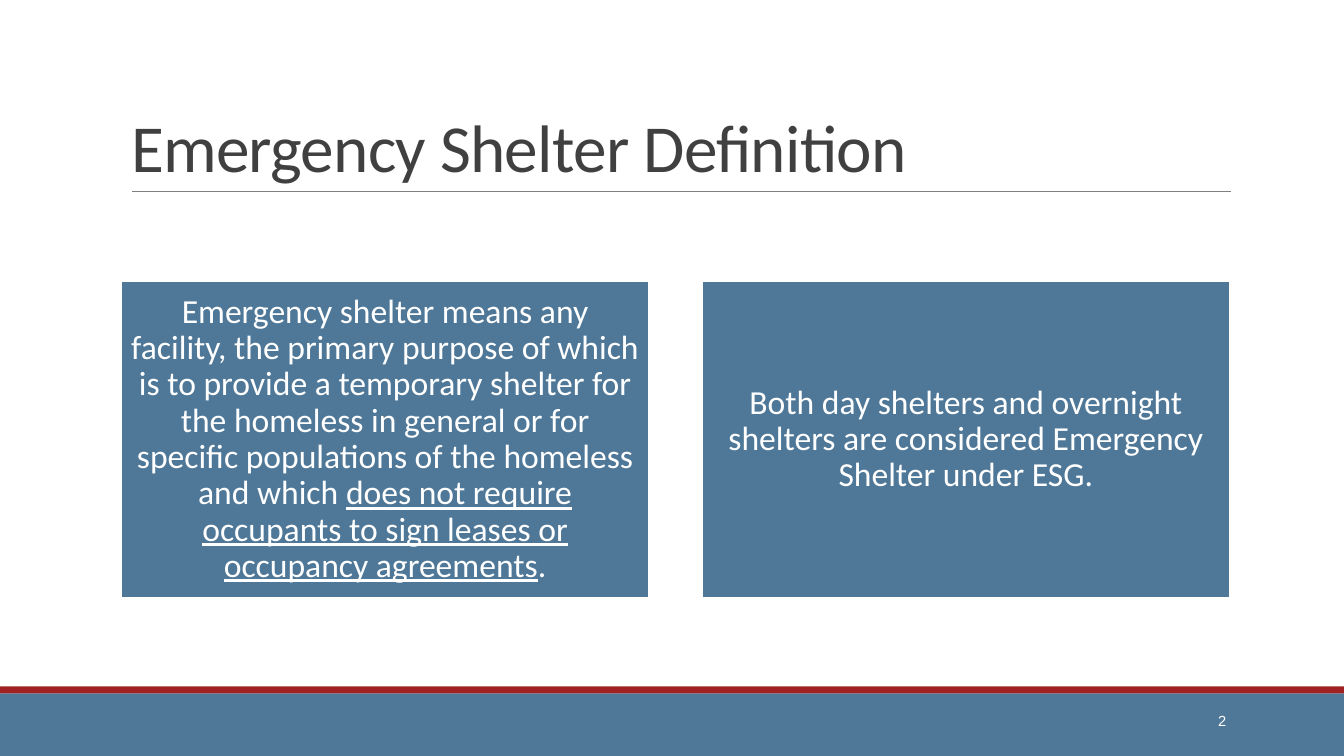
from dataclasses import dataclass

from pptx import Presentation
from pptx.dml.color import RGBColor
from pptx.enum import shapes, text
from pptx.oxml import parse_xml
from pptx.oxml.ns import nsdecls
from pptx.util import Inches, Pt


@dataclass(frozen=True)
class Theme:
    blue: RGBColor = RGBColor.from_string("4F7898")
    red: RGBColor = RGBColor.from_string("9F2122")
    white: RGBColor = RGBColor.from_string("FFFFFF")
    ink: RGBColor = RGBColor.from_string("404040")
    rule: RGBColor = RGBColor.from_string("808080")
    title_size: float = 48
    card_size: float = 24
    number_size: float = 10.5
    body_font: str = "Calibri"
    number_font: str = "Arial"


THEME = Theme()
CARDS = [
    [
        ("Emergency shelter means any facility, the primary purpose of which "
         "is to provide a temporary shelter for the homeless in general or for "
         "specific populations of the homeless and which ", False),
        ("does not require occupants to sign leases or occupancy agreements", True),
        (".", False),
    ],
    [("Both day shelters and overnight shelters are considered Emergency "
      "Shelter under ESG.", False)],
]


def apply(target, values):
    for name, value in values.items():
        setattr(target, name, value)


def write(frame, runs, font, color, frame_format, paragraph_format):
    apply(frame, {"word_wrap": True, "auto_size": text.MSO_AUTO_SIZE.NONE, **frame_format})
    paragraph = frame.paragraphs[0]
    apply(paragraph, paragraph_format)
    for words, underline in runs:
        run = paragraph.add_run()
        run.text = words
        apply(run.font, {**font, "underline": underline})
        run.font.color.rgb = color
    return paragraph


def add_block(slide, box, fill):
    block = slide.shapes.add_shape(shapes.MSO_SHAPE.RECTANGLE, *map(Inches, box))
    block.shadow.inherit = False
    block.fill.solid()
    block.fill.fore_color.rgb = fill
    block.line.fill.background()
    return block


def add_heading(slide, box, words):
    left, top, width, height = box
    title = slide.shapes.title
    apply(title, dict(zip(("left", "top", "width", "height"), map(Inches, box))))
    heading = write(
        title.text_frame, [(words, False)],
        {"name": THEME.body_font, "size": Pt(THEME.title_size)}, THEME.ink,
        {"vertical_anchor": text.MSO_ANCHOR.BOTTOM},
        {"alignment": text.PP_ALIGN.LEFT, "line_spacing": 0.85},
    )
    heading.runs[0].font._element.set("spc", "-50")
    bottom = top + height
    rule = slide.shapes.add_connector(
        shapes.MSO_CONNECTOR.STRAIGHT,
        *map(Inches, (left + 0.11, bottom, left + width + 0.01, bottom)),
    )
    rule.line.color.rgb = THEME.rule
    rule.line.width = Pt(0.5)
    rule._element.spPr.append(parse_xml(f"<a:effectLst {nsdecls('a')}/>"))


def add_cards(slide, box, cards, gap):
    left, top, width, height = box
    card_width = (width - gap * (len(cards) - 1)) / len(cards)
    inset = Inches(0.1)
    for index, runs in enumerate(cards):
        card_left = left + index * (card_width + gap)
        card = add_block(slide, (card_left, top, card_width, height), THEME.blue)
        card.line.color.rgb = THEME.white
        card.line.width = Pt(1.25)
        write(
            card.text_frame, runs,
            {"name": THEME.body_font, "size": Pt(THEME.card_size)}, THEME.white,
            {"vertical_anchor": text.MSO_ANCHOR.MIDDLE, "margin_left": inset,
             "margin_right": inset, "margin_top": inset, "margin_bottom": inset},
            {"alignment": text.PP_ALIGN.CENTER, "line_spacing": 0.9},
        )


def add_footer(slide, box, page):
    left, top, width, height = box
    stripe = 0.07
    add_block(slide, (left, top + stripe, width, height - stripe), THEME.blue)
    add_block(slide, (left, top, width, stripe), THEME.red)
    number = slide.shapes.add_textbox(
        *map(Inches, (left + width - 2.5, top + 0.14, 1.43, 0.4)))
    write(
        number.text_frame, [(page, False)],
        {"name": THEME.number_font, "size": Pt(THEME.number_size)}, THEME.white,
        {"vertical_anchor": text.MSO_ANCHOR.MIDDLE},
        {"alignment": text.PP_ALIGN.RIGHT},
    )


def main():
    deck = Presentation()
    apply(deck, {"slide_width": Inches(13.33), "slide_height": Inches(7.5)})
    slide = deck.slides.add_slide(deck.slide_layouts.get_by_name("Title Only"))
    add_footer(slide, (0, 6.81, 13.33, 0.69), "2")
    add_heading(slide, (1.2, 0.31, 11, 1.59), "Emergency Shelter Definition")
    add_cards(slide, (1.2, 2.79, 11, 3.14), CARDS, gap=0.52)
    deck.save("out.pptx")


if __name__ == "__main__":
    main()
